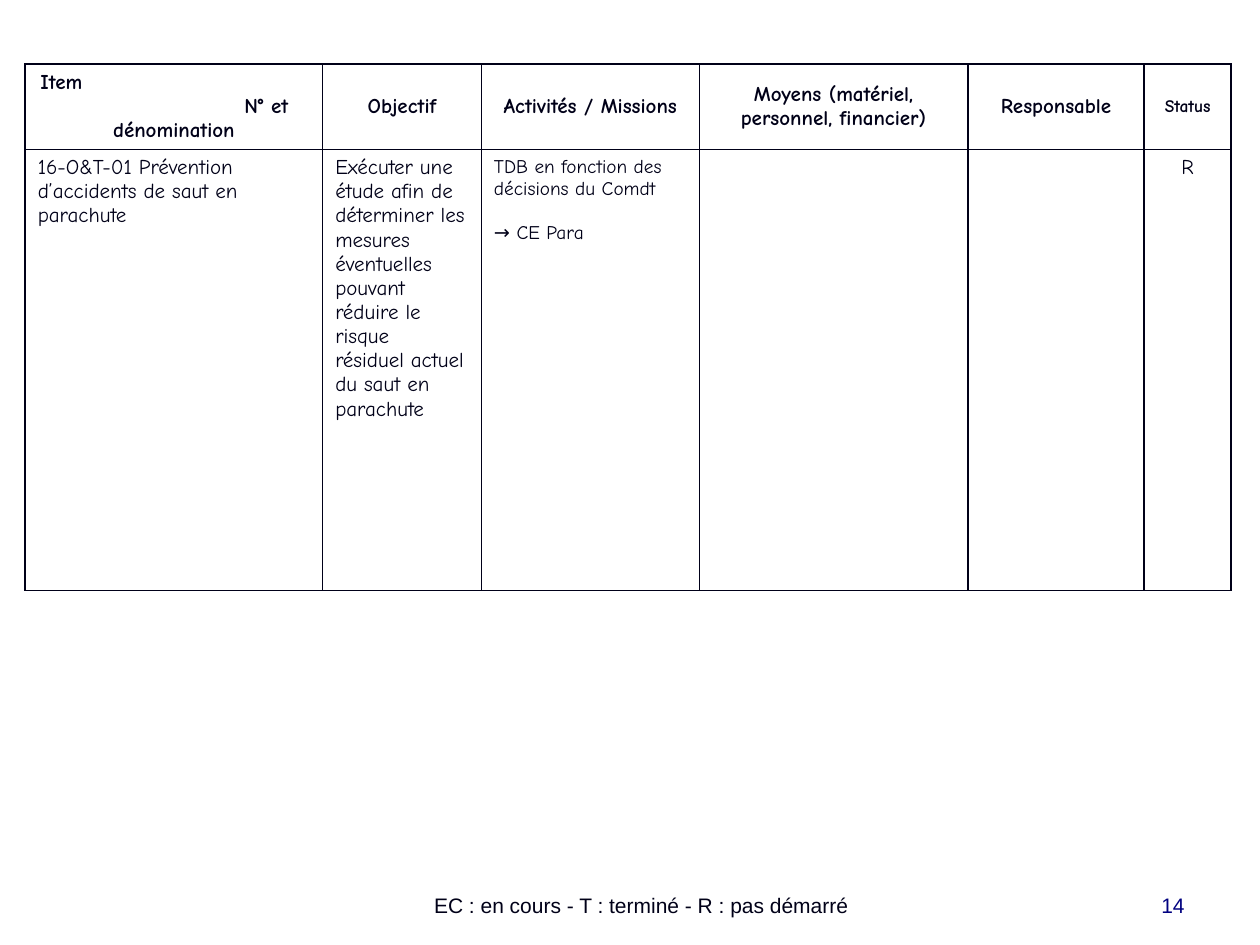
from dataclasses import dataclass

from lxml.etree import SubElement
from pptx import Presentation
from pptx.dml.color import RGBColor
from pptx.enum.text import MSO_ANCHOR, PP_ALIGN
from pptx.oxml.ns import qn
from pptx.util import Pt


@dataclass(frozen=True)
class Theme:
    ink: str = "000018"
    page_number: str = "000080"
    paper: str = "FFFFFF"
    table_font: str = "Comic Neue"
    footer_font: str = "Arial"
    normal: float = 12
    small: float = 11
    tiny: float = 10
    border: float = 1


THEME = Theme()


def write(tf, text, size=THEME.normal, font=THEME.table_font, color=THEME.ink,
          bold=False, align=PP_ALIGN.LEFT, before=0, indent=0):
    """Fill the first empty paragraph, or add a new one."""
    p = tf.paragraphs[0] if not tf.text else tf.add_paragraph()
    p.alignment = align
    if before:
        p.space_before = Pt(before)
    if indent:
        p._p.get_or_add_pPr().set("marL", str(Pt(indent)))
    r = p.add_run()
    r.text = text
    r.font.name = font
    r.font.size = Pt(size)
    r.font.bold = bold
    r.font.color.rgb = RGBColor.from_string(color)


class SlideBuilder:
    def __init__(self, slide, theme):
        self.s = slide
        self.theme = theme

    def footer(self, text, left, width, **fmt):
        box = self.s.shapes.add_textbox(Pt(left), Pt(492), Pt(width), Pt(36))
        tf = box.text_frame
        tf.word_wrap = True
        tf.vertical_anchor = MSO_ANCHOR.BOTTOM
        write(tf, text, font=self.theme.footer_font, **fmt)

    def table(self, left, top, widths, heights, rows):
        """Each cell is a list of (text, format) paragraphs."""
        frame = self.s.shapes.add_table(
            len(heights), len(widths), Pt(left), Pt(top),
            Pt(sum(widths)), Pt(sum(heights)))
        tbl = frame.table
        tbl.first_row = tbl.horz_banding = False
        for col, width in zip(tbl.columns, widths):
            col.width = Pt(width)
        for i, (height, row) in enumerate(zip(heights, rows)):
            tbl.rows[i].height = Pt(height)
            for j, paragraphs in enumerate(row):
                self.cell(tbl.cell(i, j), paragraphs, header=i == 0)

    def cell(self, cell, paragraphs, header):
        cell.vertical_anchor = MSO_ANCHOR.MIDDLE if header else MSO_ANCHOR.TOP
        self.borders(cell)
        cell.fill.solid()
        cell.fill.fore_color.rgb = RGBColor.from_string(self.theme.paper)
        for text, fmt in paragraphs:
            write(cell.text_frame, text, bold=header, **fmt)

    def borders(self, cell):
        tc_pr = cell._tc.get_or_add_tcPr()
        for side in ("a:lnL", "a:lnR", "a:lnT", "a:lnB"):
            ln = SubElement(tc_pr, qn(side), w=str(Pt(self.theme.border)))
            fill = SubElement(ln, qn("a:solidFill"))
            SubElement(fill, qn("a:srgbClr"), val=self.theme.ink)


def main():
    prs = Presentation()
    prs.slide_width, prs.slide_height = Pt(720), Pt(540)
    slide = prs.slides.add_slide(prs.slide_layouts[6])
    builder = SlideBuilder(slide, THEME)

    center = {"align": PP_ALIGN.CENTER}
    small = {"size": THEME.small}
    header = [
        [("Item", {"indent": 1.5}), ("N° et", {"indent": 118}),
         ("dénomination", center)],
        [("Objectif", center)],
        [("Activités / Missions", center)],
        [("Moyens (matériel, personnel, financier)", center)],
        [("Responsable", center)],
        [("Status", {"size": THEME.tiny, **center})],
    ]
    item = [
        [("16-O&T-01 Prévention d’accidents de saut en parachute", {})],
        [("Exécuter une étude afin de déterminer les mesures éventuelles "
          "pouvant réduire le risque", {}),
         ("résiduel actuel du saut en parachute", {})],
        [("TDB en fonction des décisions du Comdt", small),
         ("→ CE Para", {"before": 12.6, **small})],
        [],
        [],
        [("R", center)],
    ]
    builder.table(14.4, 36.7, widths=[170, 90.7, 124.6, 153.4, 100.8, 49.7],
                  heights=[48, 252], rows=[header, item])
    builder.footer("EC : en cours - T : terminé - R : pas démarré", 168, 397,
                   **center)
    builder.footer("14", 516, 168, color=THEME.page_number,
                   align=PP_ALIGN.RIGHT)
    prs.save("out.pptx")


if __name__ == "__main__":
    main()
